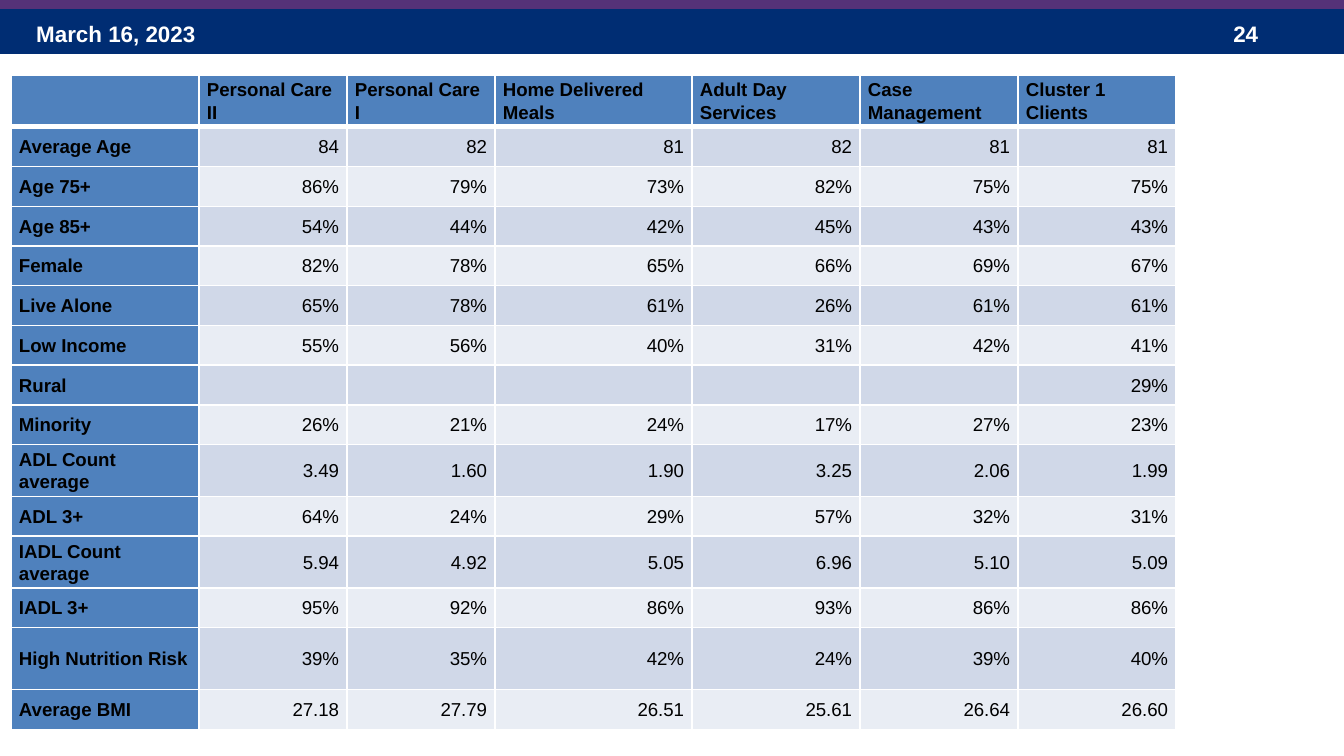
from dataclasses import dataclass

from lxml.etree import SubElement
from pptx import Presentation
from pptx.dml.color import RGBColor
from pptx.enum.shapes import MSO_SHAPE as Shape
from pptx.enum.text import MSO_ANCHOR as Anchor, PP_ALIGN as Align
from pptx.oxml.ns import qn
from pptx.util import Pt

# Content
DATE, PAGE = "March 16, 2023", "24"
SERVICES = ["", "Personal Care II", "Personal Care I", "Home Delivered Meals",
            "Adult Day Services", "Case Management", "Cluster 1 Clients"]
MEASURES = [
    ("Average Age", "84", "82", "81", "82", "81", "81"),
    ("Age 75+", "86%", "79%", "73%", "82%", "75%", "75%"),
    ("Age 85+", "54%", "44%", "42%", "45%", "43%", "43%"),
    ("Female", "82%", "78%", "65%", "66%", "69%", "67%"),
    ("Live Alone", "65%", "78%", "61%", "26%", "61%", "61%"),
    ("Low Income", "55%", "56%", "40%", "31%", "42%", "41%"),
    ("Rural", "", "", "", "", "", "29%"),
    ("Minority", "26%", "21%", "24%", "17%", "27%", "23%"),
    ("ADL Count average", "3.49", "1.60", "1.90", "3.25", "2.06", "1.99"),
    ("ADL 3+", "64%", "24%", "29%", "57%", "32%", "31%"),
    ("IADL Count average", "5.94", "4.92", "5.05", "6.96", "5.10", "5.09"),
    ("IADL 3+", "95%", "92%", "86%", "93%", "86%", "86%"),
    ("High Nutrition Risk", "39%", "35%", "42%", "24%", "39%", "40%"),
    ("Average BMI", "27.18", "27.79", "26.51", "25.61", "26.64", "26.60"),
]


@dataclass(frozen=True)
class Theme:
    font: str = "Arial"
    banner_size: int = 12
    table_size: int = 10
    spacing: float = 1.07
    navy: str = "002D73"
    purple: str = "553278"
    heading: str = "4F81BD"
    bands: tuple = ("E9EDF4", "D0D8E8")
    white: str = "FFFFFF"
    black: str = "000000"
    rule: int = 1
    header_rule: int = 3


THEME = Theme()

# Geometry in px
EMU_PER_PX = 914400 / 134.4
SLIDE = (1344, 756)
PURPLE_BAR = (0, -3, 1344, 12)
NAVY_BAR = (0, 9, 1344, 45)
DATE_BOX = (23, 13, 313, 41)
PAGE_BOX = (1220, 13, 101, 41)
TABLE_LEFT, TABLE_TOP, TABLE_HEIGHT = 11, 75, 655
COLUMNS = [188, 148, 148, 197, 168, 158, 158]
TALL_ROWS = {0: 52, 9: 52, 11: 52, 13: 62}
CELL_INSET = 8


def px(length):
    return round(length * EMU_PER_PX)


def place(box):
    return [px(length) for length in box]


def style(paragraph, size, color, bold):
    for run in paragraph.runs:
        font = run.font
        font.name, font.size, font.bold = THEME.font, Pt(size), bold
        font.color.rgb = RGBColor.from_string(color)


def add_bar(slide, box, color):
    bar = slide.shapes.add_shape(Shape.RECTANGLE, *place(box))
    bar.shadow.inherit = False
    bar.fill.solid()
    bar.fill.fore_color.rgb = RGBColor.from_string(color)
    bar.line.fill.background()


def add_banner_text(slide, box, text):
    frame = slide.shapes.add_textbox(*place(box)).text_frame
    frame.word_wrap = True
    frame.vertical_anchor = Anchor.MIDDLE
    frame.text = text
    style(frame.paragraphs[0], THEME.banner_size, THEME.white, True)


def set_borders(cell, bottom):
    properties = cell._tc.get_or_add_tcPr()
    widths = {"a:lnL": THEME.rule, "a:lnR": THEME.rule,
              "a:lnT": THEME.rule, "a:lnB": bottom}
    for tag, width in widths.items():
        line = SubElement(properties, qn(tag), w=str(Pt(width)))
        SubElement(SubElement(line, qn("a:solidFill")), qn("a:srgbClr"), val=THEME.white)


def fill_cell(cell, text, row, column):
    is_heading = row == 0 or column == 0
    cell.margin_left = cell.margin_right = px(CELL_INSET)
    cell.margin_top = cell.margin_bottom = 0
    cell.vertical_anchor = Anchor.MIDDLE
    set_borders(cell, THEME.rule if row else THEME.header_rule)
    cell.fill.solid()
    cell.fill.fore_color.rgb = RGBColor.from_string(
        THEME.heading if is_heading else THEME.bands[row % 2])

    paragraph = cell.text_frame.paragraphs[0]
    paragraph.line_spacing = THEME.spacing
    paragraph.alignment = Align.LEFT if is_heading else Align.RIGHT
    if text:
        paragraph.text = text
        style(paragraph, THEME.table_size, THEME.black, is_heading)
    else:  # keeps an empty cell from stretching its row
        SubElement(paragraph._p, qn("a:endParaRPr"), sz=str(THEME.table_size * 100))


def add_measures(slide):
    rows = [SERVICES, *MEASURES]
    regular = (TABLE_HEIGHT - sum(TALL_ROWS.values())) / (len(rows) - len(TALL_ROWS))
    box = (TABLE_LEFT, TABLE_TOP, sum(COLUMNS), TABLE_HEIGHT)
    table = slide.shapes.add_table(len(rows), len(COLUMNS), *place(box)).table
    for column, width in enumerate(COLUMNS):
        table.columns[column].width = px(width)
    for row, texts in enumerate(rows):
        table.rows[row].height = px(TALL_ROWS.get(row, regular))
        for column, text in enumerate(texts):
            fill_cell(table.cell(row, column), text, row, column)


def main():
    deck = Presentation()
    deck.slide_width, deck.slide_height = place(SLIDE)
    slide = deck.slides.add_slide(deck.slide_layouts[6])

    # Banner
    add_bar(slide, NAVY_BAR, THEME.navy)
    add_banner_text(slide, DATE_BOX, DATE)
    add_banner_text(slide, PAGE_BOX, PAGE)
    add_bar(slide, PURPLE_BAR, THEME.purple)

    # Client profile by service
    add_measures(slide)
    deck.save("out.pptx")


if __name__ == "__main__":
    main()
